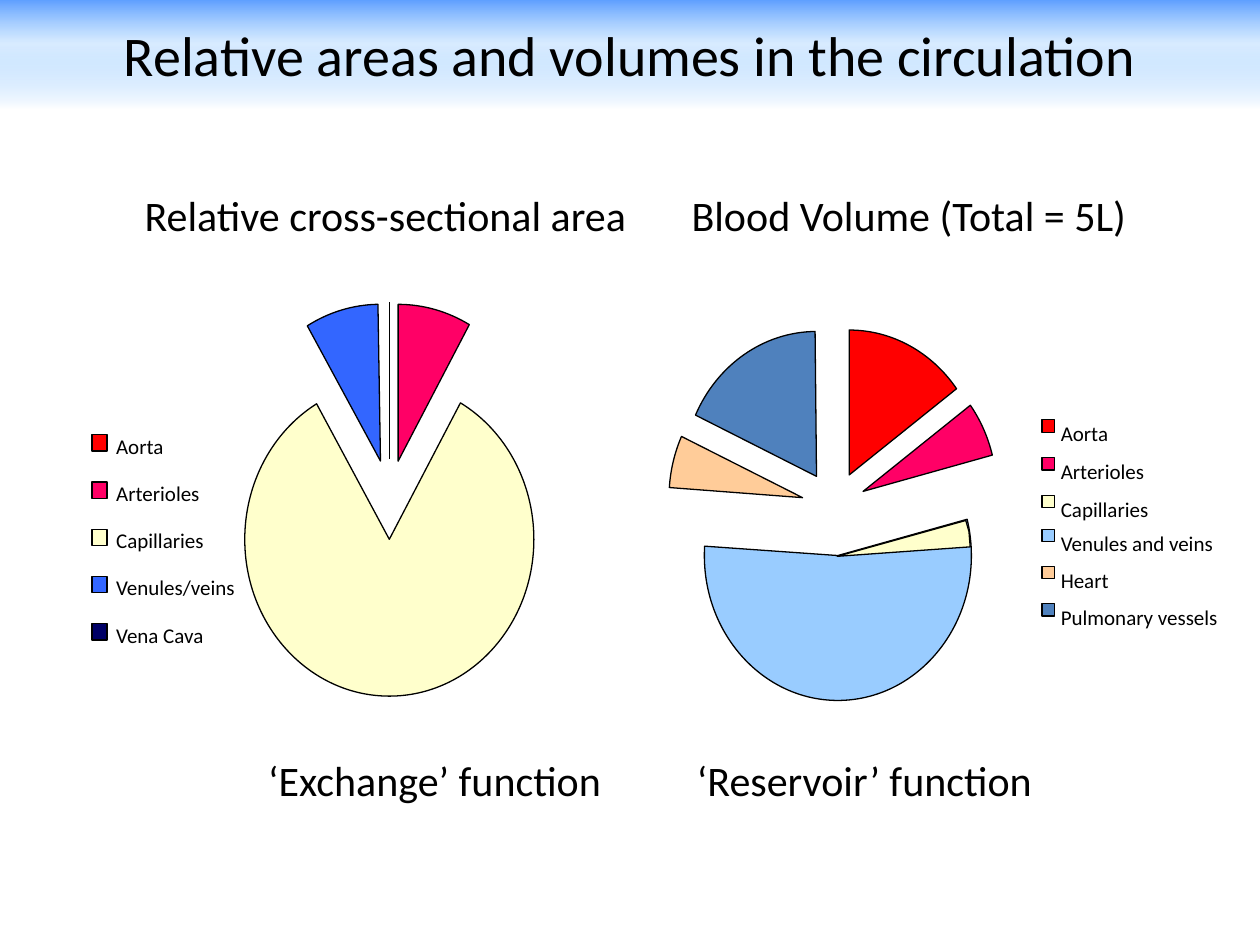
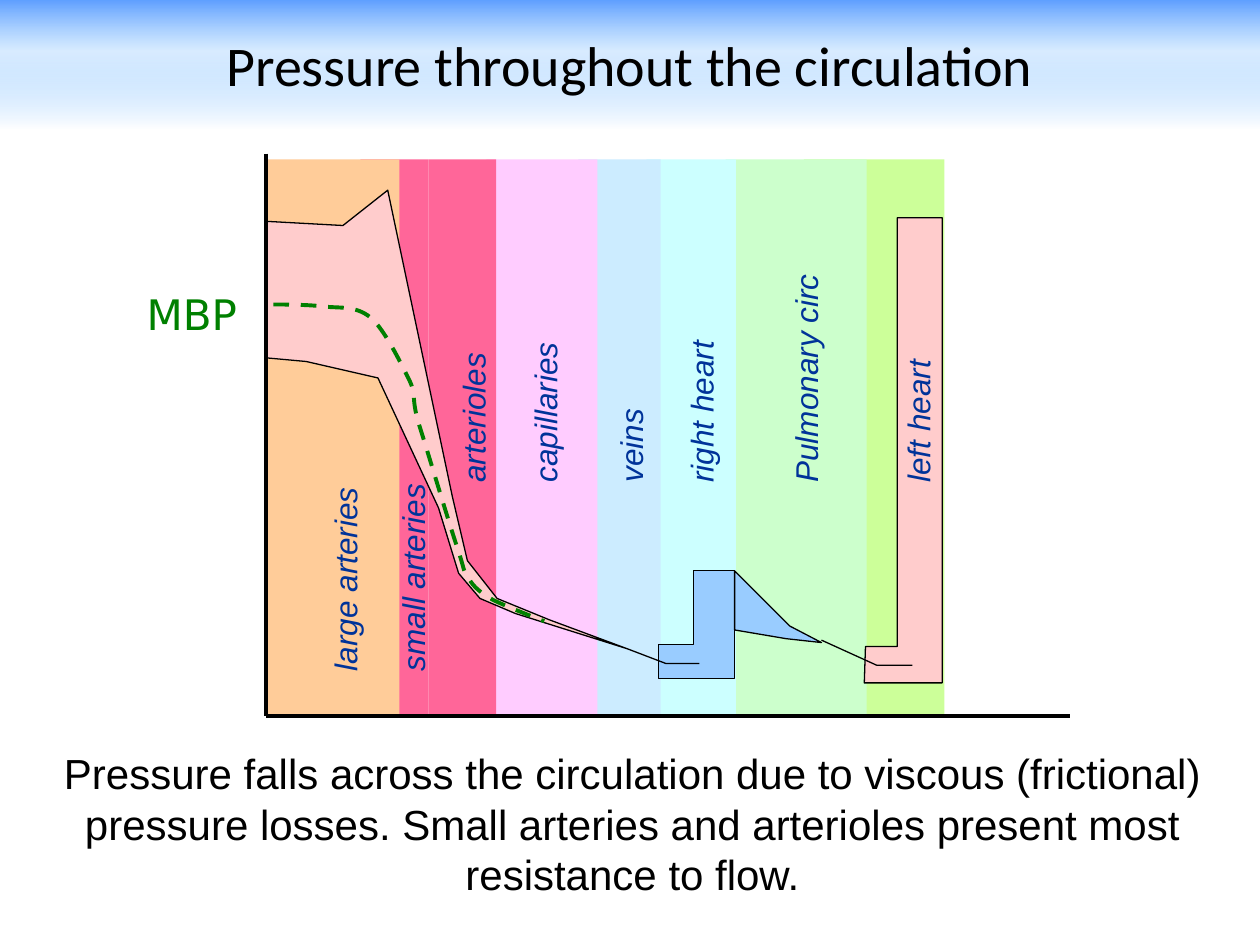
import math
from dataclasses import dataclass

from lxml import etree
from pptx import Presentation
from pptx import util as u
from pptx.dml.color import RGBColor
from pptx.enum import dml, shapes, text
from pptx.oxml import parse_xml
from pptx.oxml.ns import nsdecls, qn

Point = tuple[float, float]

COLOURS = {
    "black": "000000", "band top": "5E9EFF", "band middle": "85C2FF", "white": "FFFFFF",
    "red": "FF0000", "crimson": "FF0066", "cream": "FFFFCC", "blue": "3366FF",
    "navy": "000066", "sky": "99CCFF", "peach": "FFCC99", "steel": "4F81BD",
    "lime": "CCFF99", "mint": "CCFFCC", "aqua": "CCFFFF", "ice": "CCECFF",
    "lilac": "FFCCFF", "rose": "FF6699", "pink": "FFCCCC", "green": "008000",
    "label": "003399",
}
HEADING = {"name": "Calibri", "size": u.Pt(24)}
LEGEND = {"name": "Calibri", "size": u.Pt(12)}
TITLE = {"name": "Calibri", "size": u.Pt(32)}
REGION = {"name": "Arial", "size": u.Pt(18), "italic": True}
MEAN = {"name": "DejaVu Sans", "size": u.Pt(24)}
BODY = {"name": "Arial", "size": u.Pt(24)}
NO_MARGINS = dict.fromkeys(("margin_left", "margin_top", "margin_right", "margin_bottom"), 0)
THIN, THICK = 0.75, 2.25


@dataclass(frozen=True)
class Box:
    left: float
    top: float
    width: float
    height: float

    def lengths(self) -> list[u.Length]:
        return [u.Pt(v) for v in (self.left, self.top, self.width, self.height)]


@dataclass(frozen=True)
class Slice:
    """A pie slice; angles are degrees clockwise from the top."""
    tip: Point
    start: float
    end: float
    colour: str


@dataclass(frozen=True)
class Entry:
    words: str
    width: float
    colour: str


@dataclass(frozen=True)
class Legend:
    left: float
    marker_size: Point
    text_left: float
    text_shift: float
    tops: list[float]
    entries: list[Entry]


@dataclass(frozen=True)
class Band:
    left: float
    width: float
    colour: str


@dataclass(frozen=True)
class Label:
    words: str
    centre: Point


@dataclass(frozen=True)
class Outline:
    """Points from index curve_from on are read in threes, as cubic curves."""
    points: list[Point]
    colour: str | None = None
    curve_from: int | None = None


def rgb(colour: str) -> RGBColor:
    return RGBColor.from_string(COLOURS[colour])


def write(frame, words: str, style: dict, colour="black", align=text.PP_ALIGN.LEFT) -> None:
    para = frame.paragraphs[0]
    para.alignment = align
    span = para.add_run()
    span.text = words
    for name, value in style.items():
        setattr(span.font, name, value)
    span.font.color.rgb = rgb(colour)


def add_text(page, box: Box, words: str, style: dict, colour="black",
             align=text.PP_ALIGN.LEFT, **frame_format):
    shape = page.shapes.add_textbox(*box.lengths())
    settings = {"word_wrap": False, "auto_size": text.MSO_AUTO_SIZE.SHAPE_TO_FIT_TEXT}
    for name, value in (settings | frame_format).items():
        setattr(shape.text_frame, name, value)
    write(shape.text_frame, words, style, colour, align)
    return shape


def paint(shape, fill: str | None, line: str | None = "black", width=THIN) -> None:
    shape.shadow.inherit = False
    if fill:
        shape.fill.solid()
        shape.fill.fore_color.rgb = rgb(fill)
    else:
        shape.fill.background()
    if line:
        shape.line.color.rgb = rgb(line)
        shape.line.width = u.Pt(width)
    else:
        shape.line.fill.background()


def add_rectangle(page, box: Box, fill: str | None, line: str | None = None):
    shape = page.shapes.add_shape(shapes.MSO_SHAPE.RECTANGLE, *box.lengths())
    paint(shape, fill, line)
    return shape


def bend(shape, curve_from: int) -> None:
    """Merge each three straight steps from curve_from on into one cubic curve."""
    steps = list(shape._element.iter(qn("a:lnTo")))[curve_from - 1:]
    for first, second, third in zip(*[iter(steps)] * 3):
        first.tag = qn("a:cubicBezTo")
        for step in (second, third):
            first.append(step[0])
            step.getparent().remove(step)


def add_outline(page, outline: Outline, line="black", width=THIN):
    """Draw a closed shape if it has a fill colour, otherwise an open line."""
    first, *others = [(u.Pt(x), u.Pt(y)) for x, y in outline.points]
    builder = page.shapes.build_freeform(*first)
    builder.add_line_segments(others, close=outline.colour is not None)
    shape = builder.convert_to_shape()
    paint(shape, outline.colour, line, width)
    if outline.curve_from:
        bend(shape, outline.curve_from)
    return shape


def add_line(page, start: Point, end: Point, width: float) -> None:
    line = page.shapes.add_connector(
        shapes.MSO_CONNECTOR.STRAIGHT, *[u.Pt(v) for v in (*start, *end)])
    line.line.color.rgb = rgb("black")
    line.line.width = u.Pt(width)
    etree.SubElement(line._element.spPr, qn("a:effectLst"))


def add_title(page, words: str, height: float) -> None:
    shape = add_rectangle(page, Box(0, 0, 720, height), None)
    stops = "".join(
        f'<a:gs pos="{place * 1000}"><a:srgbClr val="{COLOURS[colour]}">'
        f'<a:alpha val="{alpha * 1000}"/></a:srgbClr></a:gs>'
        for place, colour, alpha in
        [(0, "band top", 100), (40, "band middle", 31), (100, "white", 100)])
    gradient = parse_xml(f'<a:gradFill {nsdecls("a")} rotWithShape="1"><a:gsLst>{stops}</a:gsLst>'
                         '<a:lin ang="5400000" scaled="0"/></a:gradFill>')
    properties = shape._element.spPr
    properties.replace(properties.find(qn("a:noFill")), gradient)
    shape.text_frame.word_wrap = True
    shape.text_frame.vertical_anchor = text.MSO_ANCHOR.MIDDLE
    write(shape.text_frame, words, TITLE, align=text.PP_ALIGN.CENTER)


def arc(centre: Point, radii: Point, start: float, end: float) -> list[Point]:
    """Control points of an elliptic arc, split at each quarter turn."""
    def place(angle: float, tangent: float) -> Point:
        sine, cosine = math.sin(angle), math.cos(angle)
        return (centre[0] + radii[0] * (sine + tangent * cosine),
                centre[1] - radii[1] * (cosine - tangent * sine))

    cuts = [start, *(q for q in (90, 180, 270) if start < q < end), end]
    angles = [math.radians(cut) for cut in cuts]
    points = [place(angles[0], 0)]
    for a, b in zip(angles, angles[1:]):
        pull = 4 / 3 * math.tan((b - a) / 4)
        points += [place(a, pull), place(b, -pull), place(b, 0)]
    return points


def add_pie(page, radii: Point, slices: list[Slice]) -> None:
    for piece in slices:
        edge = arc(piece.tip, radii, piece.start, piece.end)
        add_outline(page, Outline([piece.tip, *edge], piece.colour, 2))


def add_legend(page, legend: Legend) -> None:
    for top, entry in zip(legend.tops, legend.entries):
        add_rectangle(page, Box(legend.left, top, *legend.marker_size), entry.colour, "black")
        add_text(page, Box(legend.text_left, top + legend.text_shift, entry.width, 14.4),
                 entry.words, LEGEND, **NO_MARGINS)


AREA_SLICES = [
    Slice((227.5, 263.5), 0, 29.5, "crimson"),
    Slice((222.5, 308.2), 29.5, 329.8, "cream"),
    Slice((217.4, 263.5), 329.6, 359, "blue"),
]
VOLUME_SLICES = [
    Slice((485.3, 271.4), 0, 53.5, "red"),
    Slice((493.2, 280.8), 53.5, 75.5, "crimson"),
    Slice((478.8, 317.5), 75.5, 273.7, "sky"),
    Slice((458.6, 284.4), 274, 295, "peach"),
    Slice((466.6, 272.2), 295, 359.4, "steel"),
]
VOLUME_CAPILLARIES = Outline(
    [(478.4, 317.9), (554.4, 312.5), (553.7, 303.8), (551.9, 297.4)], "cream")
SHARED_ENTRIES = [Entry("Aorta", 28, "red"), Entry("Arterioles", 48.5, "crimson"),
                  Entry("Capillaries", 51, "cream")]
LEGENDS = [
    Legend(52.6, (8.6, 9.4), 66.4, -0.8, [248.4 + 27 * row for row in range(5)],
           [*SHARED_ENTRIES, Entry("Venules/veins", 69, "blue"),
            Entry("Vena Cava", 51, "navy")]),
    Legend(595.4, (7.2, 7.2), 606.2, 0.5, [239.8, 261.4, 283, 302.4, 323.6, 344.9],
           [*SHARED_ENTRIES, Entry("Venules and veins", 88.5, "sky"),
            Entry("Heart", 28, "peach"), Entry("Pulmonary vessels", 91.5, "steel")]),
]
HEADINGS = [
    (Box(75.6, 104.7, 291.6, 36), "Relative cross-sectional area"),
    (Box(388.1, 104.7, 265, 36), "Blood Volume (Total = 5L)"),
    (Box(146.2, 427.7, 211, 36), "‘Exchange’ function"),
    (Box(391.2, 427.7, 211, 36), "‘Reservoir’ function"),
]

BANDS = [
    Band(459.4, 80.2, "lime"), Band(414.7, 80.6, "mint"), Band(369.4, 51.1, "aqua"),
    Band(330.5, 47.1, "ice"), Band(277.9, 63.4, "lilac"), Band(244.8, 38.7, "rose"),
    Band(205.9, 38.9, "rose"), Band(151.9, 76.3, "peach"),
]
PRESSURES = [
    Outline([(151.9, 204.5), (175, 206.6), (216, 216), (250.6, 290.2), (262.1, 327.6),
             (274.3, 342), (294.5, 350.6), (358.6, 370.8), (313.9, 354.2), (284.1, 342),
             (267.1, 320.4), (258.5, 283.7), (221.6, 108.7), (196, 128.9),
             (151.9, 126.5)], "pink"),
    Outline([(376.3, 387.7), (419.8, 387.7), (419.8, 326.2), (396.4, 326.2),
             (396.4, 368.4), (376.3, 368.4)], "sky"),
    Outline([(419.8, 326.2), (451.4, 357.8), (469.4, 367.2), (449.3, 365), (419.8, 360)], "sky"),
    Outline([(494.6, 369.4), (512.8, 369.4), (512.8, 124.4), (538.4, 124.4),
             (538.4, 390.2), (493.9, 390.2)], "pink"),
    Outline([(358.6, 370.8), (380.6, 379.2), (399.6, 379.2)]),
    Outline([(469.4, 365.8), (501.1, 380.2), (521.3, 380.2)]),
]
MEAN_PRESSURE = [
    (156.2, 174.0), (160.6, 174.0), (174.2, 174.0), (183.6, 175), (193, 176.4),
    (203, 174.2), (211.7, 181.4), (219.6, 187.9), (229, 207.4), (234, 217.4),
    (238.3, 226.8), (234.7, 225.4), (239, 241.2), (244.1, 257), (256.3, 298.1),
    (261.4, 313.2), (266.4, 328.3), (264.2, 325.4), (267.8, 330.5), (270.7, 335.5),
    (274.3, 338.4), (281.5, 342.7), (288.7, 346.3), (305.3, 352.8), (311, 355),
]
LOW, HIGH = 319, 211.2
REGIONS = [
    Label("large arteries", (197, LOW)), Label("small arteries", (235.8, LOW)),
    Label("arterioles", (270.4, HIGH)), Label("capillaries", (311.4, HIGH)),
    Label("veins", (360.4, HIGH)), Label("right heart", (400.7, HIGH)),
    Label("left heart", (524.5, HIGH)), Label("Pulmonary circ", (460.4, HIGH)),
]


def build_areas(page) -> None:
    add_title(page, "Relative areas and volumes in the circulation", 61.8)
    add_pie(page, (82.6, 89.6), AREA_SLICES)
    add_line(page, (222.5, 262.1), (222.5, 172.8), THIN)
    add_pie(page, (76.3, 82.8), VOLUME_SLICES)
    add_outline(page, VOLUME_CAPILLARIES)
    for legend in LEGENDS:
        add_legend(page, legend)
    for box, words in HEADINGS:
        add_text(page, box, words, HEADING)


def build_pressure(page) -> None:
    add_title(page, "Pressure throughout the circulation", 73.2)
    for band in BANDS:
        add_rectangle(page, Box(band.left, 91.1, band.width, 318.2), band.colour)
    for outline in PRESSURES:
        add_outline(page, outline)
    origin = (151.9, 409)
    add_line(page, (origin[0], 87.8), origin, THICK)
    add_line(page, origin, (611.7, origin[1]), THICK)
    mean = add_outline(page, Outline(MEAN_PRESSURE, curve_from=1), "green", THICK)
    mean.line.dash_style = dml.MSO_LINE.DASH
    add_text(page, Box(76.3, 161.3, 66.2, 36), "MBP", MEAN, "green", text.PP_ALIGN.RIGHT)
    width, height = 143.3, 28.8
    for label in REGIONS:
        x, y = label.centre
        box = Box(x - width / 2, y - height / 2, width, height)
        add_text(page, box, label.words, REGION, "label", word_wrap=True).rotation = 270
    add_text(page, Box(22.6, 423.8, 677.5, 123.8),
             "Pressure falls across the circulation due to viscous (frictional) pressure losses. "
             "Small arteries and arterioles present most resistance to flow.",
             BODY, align=text.PP_ALIGN.CENTER, word_wrap=True)


def main() -> None:
    deck = Presentation()
    deck.slide_width, deck.slide_height = u.Pt(720), u.Pt(540)
    for build in (build_areas, build_pressure):
        build(deck.slides.add_slide(deck.slide_layouts[6]))
    deck.save("out.pptx")


if __name__ == "__main__":
    main()
